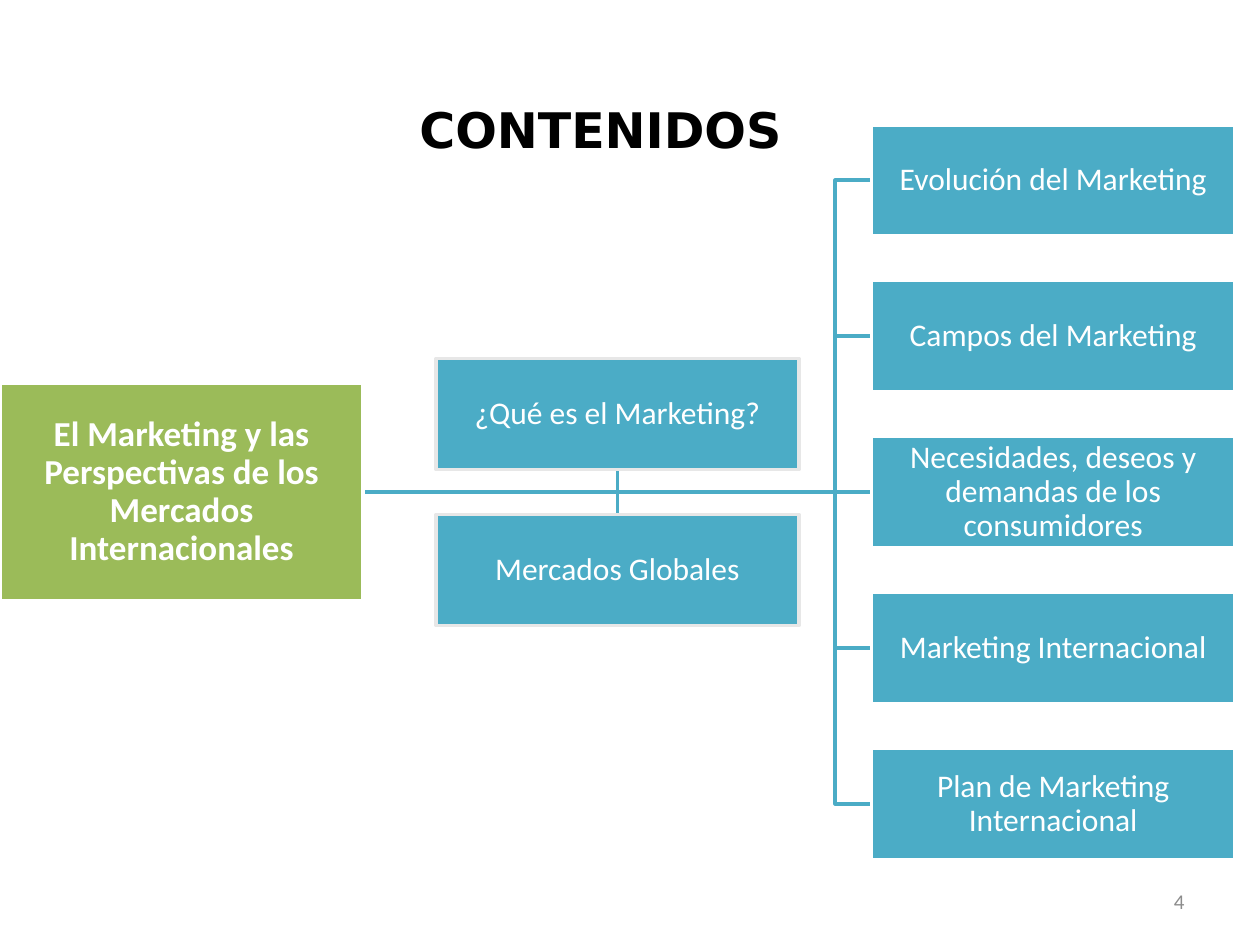
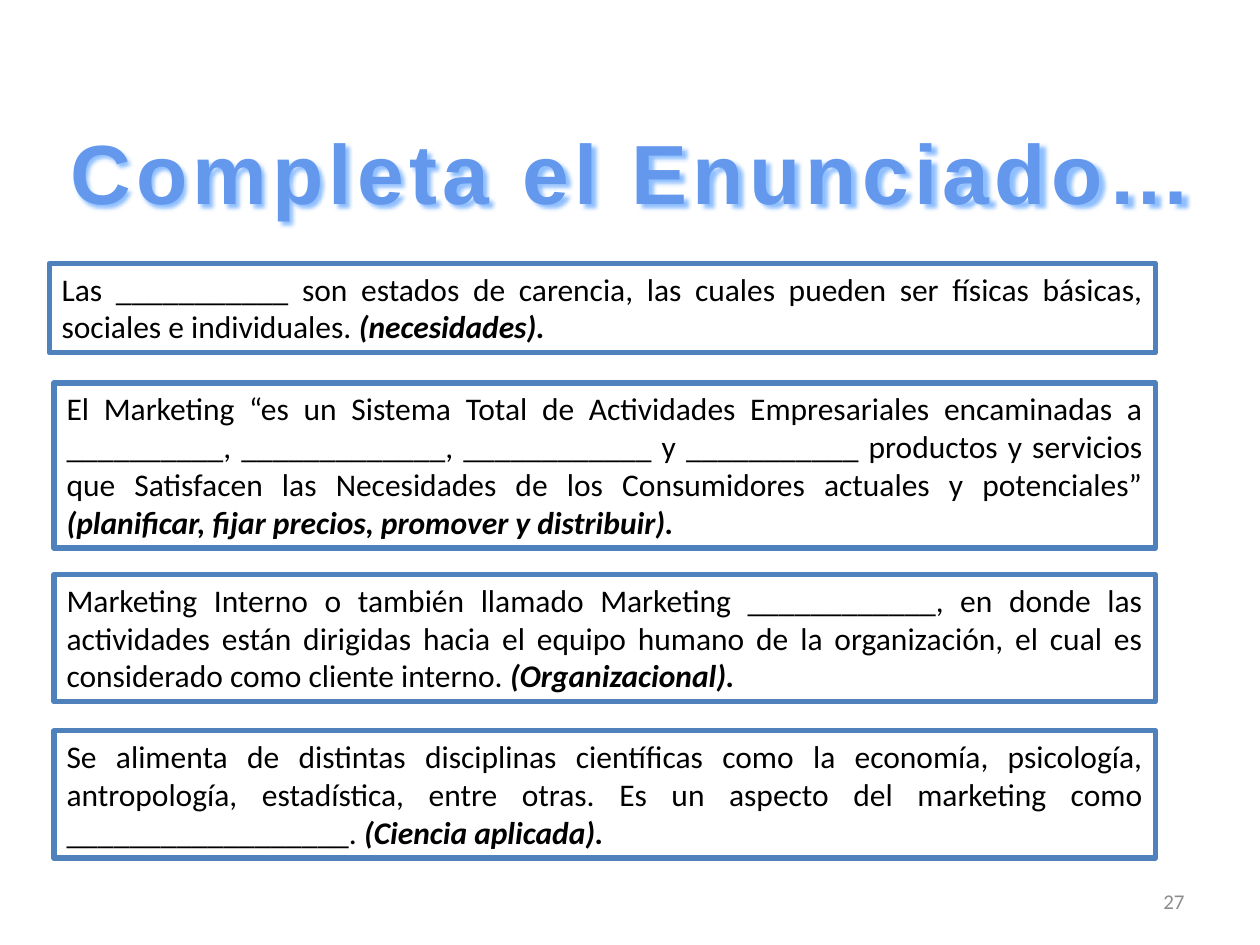
from dataclasses import dataclass

from lxml.etree import SubElement, fromstring
from pptx import Presentation
from pptx.dml.color import RGBColor
from pptx.enum.shapes import MSO_CONNECTOR, MSO_SHAPE
from pptx.enum.text import MSO_ANCHOR, MSO_AUTO_SIZE, PP_ALIGN
from pptx.oxml.ns import nsdecls, qn
from pptx.util import Inches, Pt

TITLE_ONLY = 5
TOP, LEFT, BOTTOM, RIGHT = range(4)


@dataclass(frozen=True)
class Theme:
    white: str = "FFFFFF"
    black: str = "000000"
    grey: str = "8C8C8C"
    pale: str = "E7E7E7"
    green: str = "9BBB59"
    teal: str = "4BACC6"
    blue: str = "4F81BD"
    sky: str = "6398ED"
    navy: str = "265EA0"
    glow: str = "8FBFFF"
    title_edge: str = "F4F6F9"
    body_font: str = "Calibri"
    heading_font: str = "DejaVu Sans"
    display_font: str = "Arial"
    number: int = 12
    body: int = 18
    root: int = 20
    heading: int = 28
    display: int = 48


T = Theme()


@dataclass(frozen=True)
class Box:
    """A rectangle in inches."""
    x: float
    y: float
    w: float
    h: float

    def emu(self):
        return [Inches(v) for v in (self.x, self.y, self.w, self.h)]


def set_all(target, **values):
    for name, value in values.items():
        setattr(target, name, value)


def set_line(sp, color, width):
    sp.line.color.rgb = RGBColor.from_string(color)
    sp.line.width = Pt(width)


def add_run(p, text, size, color, name=T.body_font, **values):
    r = p.add_run()
    r.text = text
    set_all(r.font, size=Pt(size), name=name, **values)
    r.font.color.rgb = RGBColor.from_string(color)
    return r


def add_rect(slide, box, fill, line, width):
    sp = slide.shapes.add_shape(MSO_SHAPE.RECTANGLE, *box.emu())
    sp.shadow.inherit = False
    sp.fill.solid()
    sp.fill.fore_color.rgb = RGBColor.from_string(fill)
    set_line(sp, line, width)
    return sp


def add_title(slide, box, text, size, color, font, **frame):
    title = slide.shapes.title
    set_all(title, **dict(zip(("left", "top", "width", "height"), box.emu())))
    tf = title.text_frame
    set_all(tf, vertical_anchor=MSO_ANCHOR.TOP,
            auto_size=MSO_AUTO_SIZE.SHAPE_TO_FIT_TEXT, **frame)
    p = tf.paragraphs[0]
    p.alignment = PP_ALIGN.CENTER
    return add_run(p, text, size, color, font, bold=True)


def add_number(slide, number):
    tf = slide.shapes.add_textbox(*Box(7.17, 6.95, 2.33, 0.4).emu()).text_frame
    set_all(tf, word_wrap=True, vertical_anchor=MSO_ANCHOR.MIDDLE)
    p = tf.paragraphs[0]
    p.alignment = PP_ALIGN.RIGHT
    add_run(p, str(number), T.number, T.grey)


def add_node(slide, box, text, fill=T.teal, line=T.white, size=T.body, bold=False):
    sp = add_rect(slide, box, fill, line, 2)
    tf = sp.text_frame
    margins = dict.fromkeys(("margin_left", "margin_top", "margin_right",
                             "margin_bottom"), Inches(0.01))
    set_all(tf, word_wrap=True, vertical_anchor=MSO_ANCHOR.MIDDLE, **margins)
    p = tf.paragraphs[0]
    set_all(p, alignment=PP_ALIGN.CENTER, line_spacing=0.9)
    add_run(p, text, size, T.white, bold=bold)
    return sp


def send_to_back(sp):
    sp.element.getparent().insert(2, sp.element)


def add_straight_link(slide, source, target):
    c = slide.shapes.add_connector(MSO_CONNECTOR.STRAIGHT, 0, 0, 0, 0)
    c.begin_connect(source, RIGHT)
    c.end_connect(target, LEFT)
    set_line(c, T.teal, 2)
    SubElement(c.element.spPr, qn("a:effectLst"))
    send_to_back(c)


def add_bent_link(slide, start, *points):
    builder = slide.shapes.build_freeform(*start)
    builder.add_line_segments(points, close=False)
    sp = builder.convert_to_shape()
    sp.shadow.inherit = False
    sp.fill.background()
    set_line(sp, T.teal, 2)
    send_to_back(sp)


def add_tree(slide, area, root_text, assistants, topics):
    """Root, assistants and topics in three columns; one topic per row."""
    col_w, row_h = area.w / 3.4, 0.88
    col_step = col_w * 1.2
    row_step = (area.h - row_h) / (len(topics) - 1)

    def cell(col, row):
        return Box(area.x + col * col_step, area.y + row * row_step, col_w, row_h)

    middle = (len(topics) - 1) / 2
    mid_y = area.y + area.h / 2
    root_h = col_w * 0.6
    root = add_node(slide, Box(area.x, mid_y - root_h / 2, col_w, root_h),
                    root_text, T.green, size=T.root, bold=True)
    topic_nodes = [add_node(slide, cell(2, i), text) for i, text in enumerate(topics)]
    upper, lower = [add_node(slide, cell(1, middle - 0.5 + i), text, line=T.pale)
                    for i, text in enumerate(assistants)]

    start = (root.left + root.width, Inches(mid_y))
    stem = upper.left + upper.width // 2
    spine = (upper.left + upper.width + topic_nodes[0].left) // 2
    for y in (upper.top + upper.height, lower.top):
        add_bent_link(slide, start, (stem, start[1]), (stem, y))
    for i, sp in enumerate(topic_nodes):
        if i == middle:
            add_straight_link(slide, root, sp)
        else:
            y = sp.top + sp.height // 2
            add_bent_link(slide, start, (spine, start[1]), (spine, y), (sp.left, y))


def style_display_title(slide, r):
    """Gradient letters, thin edge, wide spacing and a soft glow."""
    fill = r.font.fill
    fill.gradient()
    fill.gradient_angle = 270
    for stop, color, position in zip(fill.gradient_stops, (T.sky, T.navy), (0.1, 0.75)):
        stop.color.rgb = RGBColor.from_string(color)
        stop.position = position
    rpr = r.font.fill._xPr
    rpr.set("spc", "300")
    rpr.insert(0, fromstring(
        f'<a:ln {nsdecls("a")} w="11430"><a:solidFill>'
        f'<a:srgbClr val="{T.title_edge}"/></a:solidFill></a:ln>'))
    slide.shapes.title.element.spPr.append(fromstring(
        f'<a:effectLst {nsdecls("a")}><a:outerShdw blurRad="25400" dist="20000" '
        f'dir="2700000"><a:srgbClr val="{T.glow}"/></a:outerShdw></a:effectLst>'))


def add_statements(slide, area, statements):
    """Framed statements at their own offsets, each as tall as its lines."""
    line_h, padding, outdent = 0.3, 0.11, 0.04
    for offset, lines, text, answer in statements:
        shift = 0 if offset else outdent
        box = Box(area.x - shift, area.y + offset, area.w + shift,
                  lines * line_h + padding)
        tf = add_rect(slide, box, T.white, T.blue, 3).text_frame
        set_all(tf, word_wrap=True, vertical_anchor=MSO_ANCHOR.TOP,
                auto_size=MSO_AUTO_SIZE.SHAPE_TO_FIT_TEXT)
        p = tf.paragraphs[0]
        p.alignment = PP_ALIGN.JUSTIFY
        add_run(p, text + " ", T.body, T.black)
        add_run(p, answer, T.body, T.black, bold=True, italic=True)


def contents_slide(prs):
    slide = prs.slides.add_slide(prs.slide_layouts[TITLE_ONLY])
    add_number(slide, 4)
    add_tree(slide, Box(0, 0.99, 9.8, 5.83),
             "El Marketing y las Perspectivas de los Mercados Internacionales",
             ["¿Qué es el Marketing?", "Mercados Globales"],
             ["Evolución del Marketing", "Campos del Marketing",
              "Necesidades, deseos y demandas de los consumidores",
              "Marketing Internacional", "Plan de Marketing Internacional"])
    add_title(slide, Box(0.59, 0.74, 8.35, 0.57), "CONTENIDOS",
              T.heading, T.black, T.heading_font, word_wrap=True)


def exercise_slide(prs):
    slide = prs.slides.add_slide(prs.slide_layouts[TITLE_ONLY])
    add_number(slide, 27)
    r = add_title(slide, Box(0.39, 0.91, 9.25, 0.91), "Completa el Enunciado…",
                  T.display, T.sky, T.display_font, word_wrap=False)
    style_display_title(slide, r)
    add_statements(slide, Box(0.43, 2.09, 8.74, 4.72), [
        (0, 2, "Las ___________ son estados de carencia, las cuales pueden ser físicas "
               "básicas, sociales e individuales.", "(necesidades)."),
        (0.95, 4, "El Marketing “es un Sistema Total de Actividades Empresariales "
                  "encaminadas a __________, _____________, ____________ y ___________ "
                  "productos y servicios que Satisfacen las Necesidades de los "
                  "Consumidores actuales y potenciales”",
         "(planificar, fijar precios, promover y distribuir)."),
        (2.47, 3, "Marketing Interno o también llamado Marketing ____________, en donde "
                  "las actividades están dirigidas hacia el equipo humano de la "
                  "organización, el cual es considerado como cliente interno.",
         "(Organizacional)."),
        (3.71, 3, "Se alimenta de distintas disciplinas científicas como la economía, "
                  "psicología, antropología, estadística, entre otras. Es un aspecto "
                  "del marketing como __________________.", "(Ciencia aplicada)."),
    ])


def main():
    prs = Presentation()
    set_all(prs, slide_width=Inches(10), slide_height=Inches(7.5))
    contents_slide(prs)
    exercise_slide(prs)
    prs.save("out.pptx")


if __name__ == "__main__":
    main()
